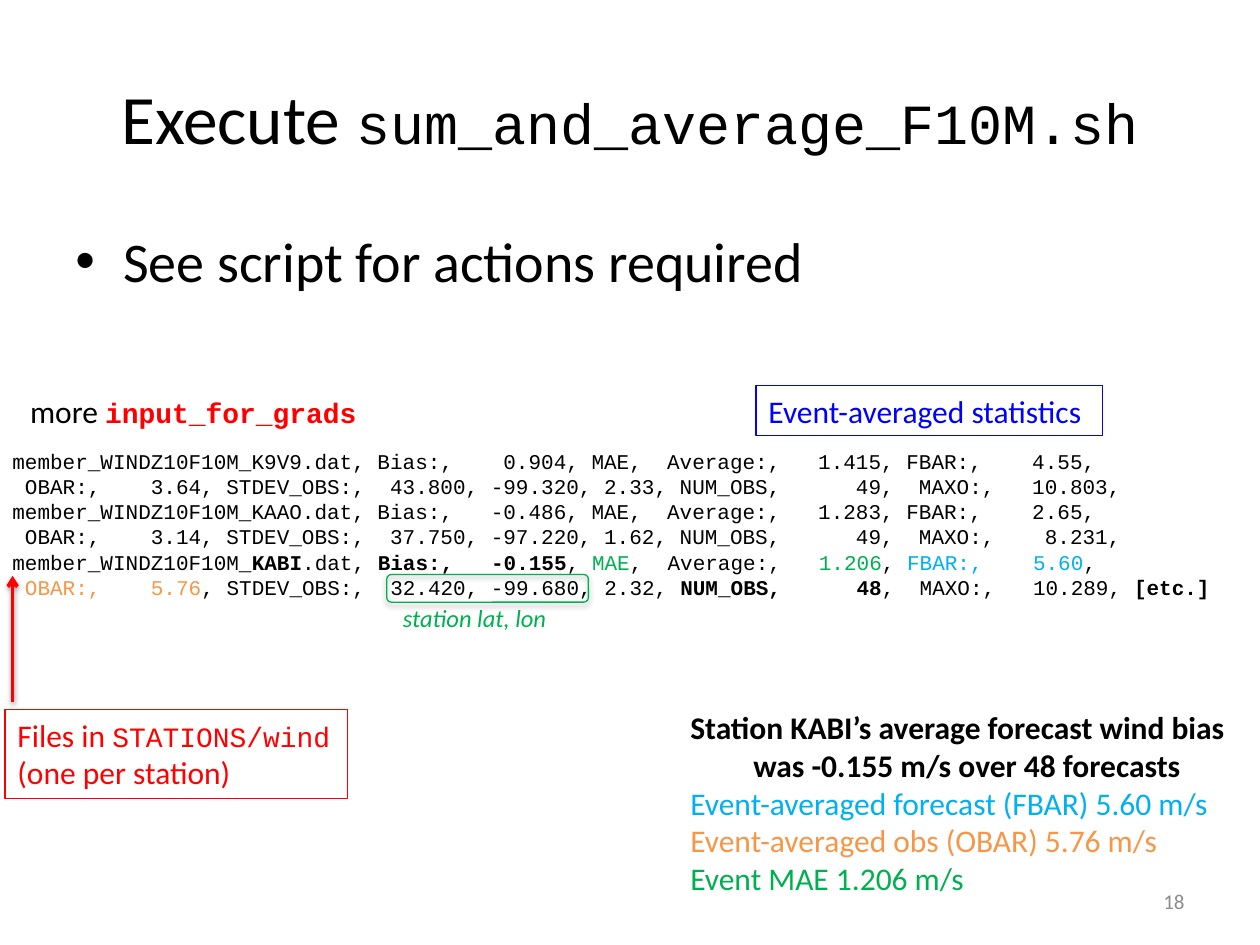
from dataclasses import dataclass
from typing import Optional

import pptx
import pptx.dml.color
import pptx.enum.shapes
import pptx.enum.text
import pptx.oxml
import pptx.oxml.ns
import pptx.util

RGBColor = pptx.dml.color.RGBColor
Align = pptx.enum.text.PP_ALIGN
Anchor = pptx.enum.text.MSO_ANCHOR
AutoSize = pptx.enum.text.MSO_AUTO_SIZE
Preset = pptx.enum.shapes.MSO_SHAPE

BLACK = RGBColor(0x00, 0x00, 0x00)
RED = RGBColor(0xFF, 0x00, 0x00)
BLUE = RGBColor(0x00, 0x00, 0xFF)
GREEN = RGBColor(0x00, 0xB0, 0x50)
SKY = RGBColor(0x00, 0xB0, 0xF0)
ORANGE = RGBColor(0xF7, 0x96, 0x46)
GRAY = RGBColor(0x8C, 0x8C, 0x8C)
SANS = "Calibri"
MONO = "Courier New"
WIDTH = pptx.util.Inches(10)
HEIGHT = pptx.util.Inches(7.5)


@dataclass(frozen=True)
class Place:
    """Left, top, width and height in percent of the slide."""

    left: float
    top: float
    width: float
    height: float

    def lengths(self) -> tuple[int, int, int, int]:
        return (across(self.left), down(self.top), across(self.width), down(self.height))


@dataclass(frozen=True)
class Span:
    text: str
    size: float = 18
    color: RGBColor = BLACK
    font: str = SANS
    bold: bool = False
    italic: bool = False


@dataclass(frozen=True)
class TextBox:
    place: Place
    paras: list[list[Span]]
    border: Optional[RGBColor] = None
    align: Align = Align.LEFT
    anchor: Anchor = Anchor.TOP
    wrap: bool = False


def across(percent: float) -> int:
    return round(WIDTH * percent / 100)


def down(percent: float) -> int:
    return round(HEIGHT * percent / 100)


def code(text: str, color: RGBColor = BLACK, bold: bool = False) -> Span:
    return Span(text, 12, color, MONO, bold)


def write(frame, paras: list[list[Span]], align: Align) -> None:
    for index, spans in enumerate(paras):
        para = frame.add_paragraph() if index else frame.paragraphs[0]
        para.alignment = align
        for span in spans:
            run = para.add_run()
            run.text = span.text
            run.font.name = span.font
            run.font.size = pptx.util.Pt(span.size)
            run.font.bold = span.bold
            run.font.italic = span.italic
            run.font.color.rgb = span.color


def outline(shape, color: RGBColor) -> None:
    shape.shadow.inherit = False
    shape.fill.background()
    shape.line.color.rgb = color
    shape.line.width = pptx.util.Pt(0.75)


def add_box(page, box: TextBox):
    if box.border is None:
        shape = page.shapes.add_textbox(*box.place.lengths())
    else:
        shape = page.shapes.add_shape(Preset.RECTANGLE, *box.place.lengths())
        outline(shape, box.border)
    frame = shape.text_frame
    frame.word_wrap = box.wrap
    frame.auto_size = AutoSize.NONE if box.wrap else AutoSize.SHAPE_TO_FIT_TEXT
    frame.vertical_anchor = box.anchor
    write(frame, box.paras, box.align)
    return shape


def add_bullet(shape) -> None:
    properties = shape.text_frame.paragraphs[0]._p.get_or_add_pPr()
    indent = pptx.util.Inches(0.38)
    properties.set("marL", str(indent))
    properties.set("indent", str(-indent))
    for tag, name, value in (("buFont", "typeface", "Arial"), ("buChar", "char", "•")):
        bullet = pptx.oxml.parse_xml(f'<a:{tag} {pptx.oxml.ns.nsdecls("a")} {name}="{value}"/>')
        properties.append(bullet)


def cast_shadow(shape, opacity: int, distance: float) -> None:
    properties = shape._element.spPr
    for effects in properties.findall(pptx.oxml.ns.qn("a:effectLst")):
        properties.remove(effects)
    properties.append(pptx.oxml.parse_xml(
        f'<a:effectLst {pptx.oxml.ns.nsdecls("a")}>'
        f'<a:outerShdw blurRad="{pptx.util.Pt(3.1)}" dist="{pptx.util.Pt(distance)}" '
        f'dir="5400000" rotWithShape="0"><a:srgbClr val="{BLACK}">'
        f'<a:alpha val="{opacity * 1000}"/></a:srgbClr></a:outerShdw></a:effectLst>'))


def add_arrow(page, column: float, start: float, end: float) -> None:
    arrow = page.shapes.add_connector(
        pptx.enum.shapes.MSO_CONNECTOR.STRAIGHT,
        across(column), down(start), across(column), down(end))
    arrow.line.color.rgb = RED
    arrow.line.width = pptx.util.Pt(2)
    arrow.line._ln.append(pptx.oxml.parse_xml(
        f'<a:tailEnd {pptx.oxml.ns.nsdecls("a")} type="arrow"/>'))
    cast_shadow(arrow, 38, 1.6)


TITLE_PLACE = Place(5, 4, 90, 16.67)
TITLE = [[Span("Execute ", 39.6), Span("sum_and_average_F10M.sh", 32.4, font=MONO)]]
BODY = TextBox(Place(5, 23.33, 90, 66), [[Span("See script for actions required", 32)]], wrap=True)

STATISTICS = [
    [code("member_WINDZ10F10M_K9V9.dat, Bias:,    0.904, MAE,  Average:,   1.415, FBAR:,    4.55,")],
    [code(" OBAR:,    3.64, STDEV_OBS:,  43.800, -99.320, 2.33, NUM_OBS,      49,  MAXO:,   10.803,")],
    [code("member_WINDZ10F10M_KAAO.dat, Bias:,   -0.486, MAE,  Average:,   1.283, FBAR:,    2.65,")],
    [code(" OBAR:,    3.14, STDEV_OBS:,  37.750, -97.220, 1.62, NUM_OBS,      49,  MAXO:,    8.231,")],
    [code("member_WINDZ10F10M_"), code("KABI", bold=True), code(".dat, "),
     code("Bias:,   -0.155", bold=True), code(", "), code("MAE", GREEN),
     code(",  Average:,   "), code("1.206", GREEN), code(", "),
     code("FBAR:,    5.60", SKY), code(",")],
    [code(" "), code("OBAR:,    5.76", ORANGE), code(", STDEV_OBS:,  32.420, -99.680, 2.32, "),
     code("NUM_OBS,      48", bold=True), code(",  MAXO:,   10.289, "), code("[etc.]", bold=True)],
]
COMMAND = [[Span("more "), Span("input_for_grads", 16, RED, MONO, True)]]
FILES = [
    [Span("Files in ", color=RED), Span("STATIONS/wind", 16, RED, MONO)],
    [Span("(one per station)", color=RED)],
]
SUMMARY = [
    [Span("Station KABI’s average forecast wind bias", bold=True)],
    [Span("\twas -0.155 m/s over 48 forecasts", bold=True)],
    [Span("Event-averaged forecast (FBAR) 5.60 m/s", color=SKY)],
    [Span("Event-averaged obs (OBAR) 5.76 m/s", color=ORANGE)],
    [Span("Event MAE 1.206 m/s", color=GREEN)],
]
LISTING = [
    TextBox(Place(0, 46.8, 99.6, 17.47), STATISTICS),
    TextBox(Place(1.4, 40.8, 28.3, 5.33), COMMAND),
]
NOTES = [
    TextBox(Place(0.4, 75.07, 27.2, 9.47), FILES, RED),
    TextBox(Place(60, 40.8, 27.5, 5.33), [[Span("Event-averaged statistics", color=BLUE)]], BLUE),
    TextBox(Place(31, 63.2, 14, 4.53), [[Span("station lat, lon", 14, GREEN, italic=True)]]),
    TextBox(Place(53.8, 74.27, 44.8, 21.6), SUMMARY),
    TextBox(Place(71.7, 92.67, 23.3, 5.33), [[Span("18", 12, GRAY)]],
            align=Align.RIGHT, anchor=Anchor.MIDDLE, wrap=True),
]


def main() -> None:
    deck = pptx.Presentation()
    deck.slide_width, deck.slide_height = WIDTH, HEIGHT
    page = deck.slides.add_slide(deck.slide_layouts.get_by_name("Title Only"))
    title = page.shapes.title
    title.left, title.top, title.width, title.height = TITLE_PLACE.lengths()
    title.text_frame.auto_size = AutoSize.NONE
    title.text_frame.vertical_anchor = Anchor.MIDDLE
    write(title.text_frame, TITLE, Align.CENTER)
    add_bullet(add_box(page, BODY))
    for box in LISTING:
        add_box(page, box)
    add_arrow(page, 1, 74.27, 60.93)
    for box in NOTES:
        add_box(page, box)
    highlight = page.shapes.add_shape(
        Preset.ROUNDED_RECTANGLE, *Place(30.7, 60.8, 16, 2.93).lengths())
    outline(highlight, GREEN)
    cast_shadow(highlight, 35, 1.8)
    deck.save("out.pptx")


if __name__ == "__main__":
    main()
